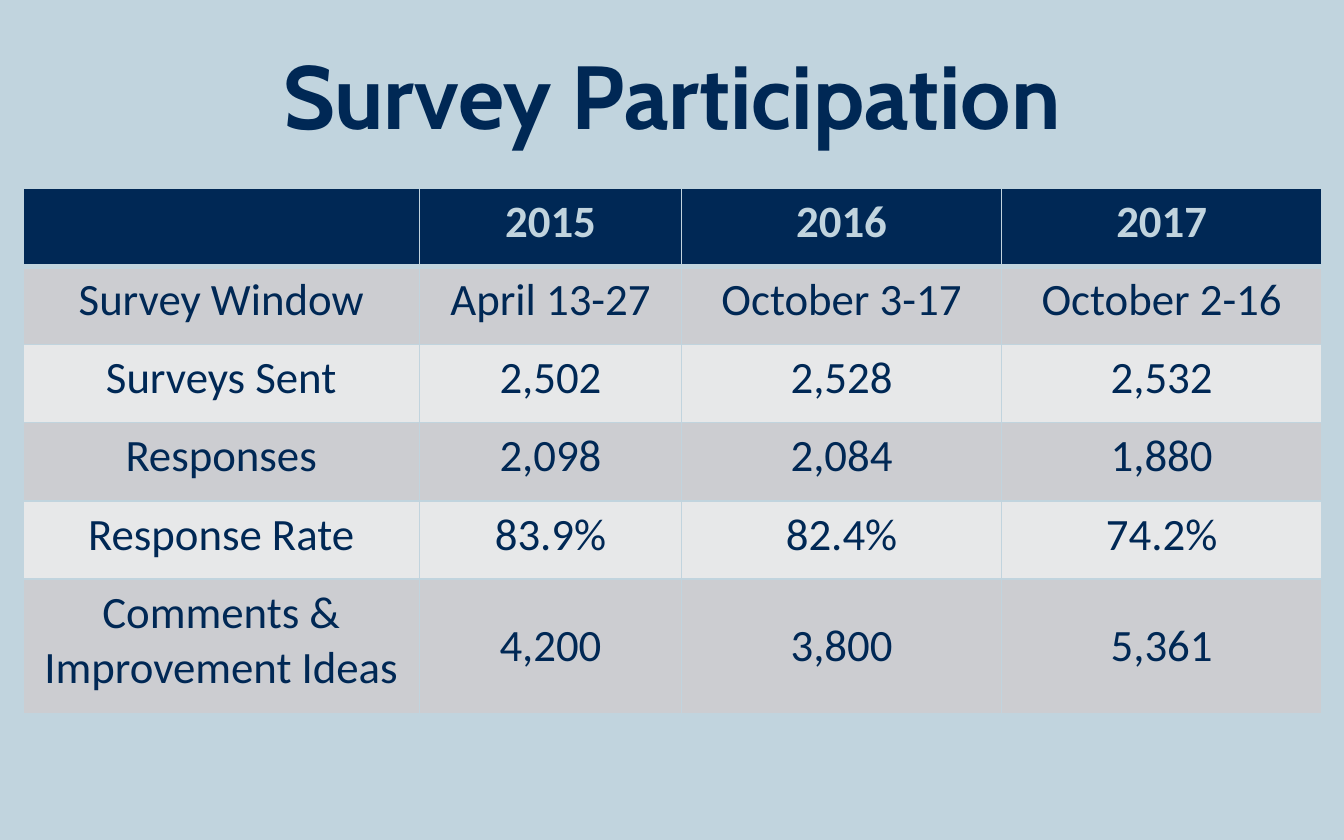
from dataclasses import dataclass

from lxml import etree
from pptx import Presentation
from pptx.dml.color import RGBColor
from pptx.enum.text import MSO_ANCHOR, PP_ALIGN
from pptx.oxml.ns import qn
from pptx.util import Cm, Pt

CENTER = PP_ALIGN.CENTER
TOP, MIDDLE = MSO_ANCHOR.TOP, MSO_ANCHOR.MIDDLE


@dataclass(frozen=True)
class Theme:
    pale: str = "C1D4DE"
    navy: str = "002855"
    band_dark: str = "CCCDD1"
    band_light: str = "E7E8E9"
    title_font: str = "Cabin"
    body_font: str = "Calibri"
    title_size: int = 48
    body_size: int = 24
    rule: int = 1
    header_rule: int = 3


@dataclass(frozen=True)
class SurveyRow:
    label: str
    values: tuple[str, str, str]
    height: float = 1.48
    value_anchor: MSO_ANCHOR = TOP


THEME = Theme()
COLUMN_WIDTHS = (7.5, 4.95, 6.05, 6.05)
ROWS = (
    SurveyRow("", ("2015", "2016", "2017")),
    SurveyRow("Survey Window", ("April 13-27", "October 3-17", "October 2-16")),
    SurveyRow("Surveys Sent", ("2,502", "2,528", "2,532")),
    SurveyRow("Responses", ("2,098", "2,084", "1,880")),
    SurveyRow("Response Rate", ("83.9%", "82.4%", "74.2%")),
    SurveyRow("Comments & Improvement Ideas", ("4,200", "3,800", "5,361"), 2.54, MIDDLE),
)


def write(tf, text: str, font: str, size: int, color: str, bold: bool) -> None:
    p = tf.paragraphs[0]
    p.alignment = CENTER
    if not text:
        return
    r = p.add_run()
    r.text = text
    for name, value in {"name": font, "size": Pt(size), "bold": bold}.items():
        setattr(r.font, name, value)
    r.font.color.rgb = RGBColor.from_string(color)


def add_borders(cell, widths: dict[str, int]) -> None:
    tc_pr = cell._tc.get_or_add_tcPr()
    for side, width in widths.items():
        ln = etree.SubElement(tc_pr, qn(f"a:ln{side}"), w=str(Pt(width)))
        fill = etree.SubElement(ln, qn("a:solidFill"))
        etree.SubElement(fill, qn("a:srgbClr"), val=THEME.pale)


def add_title(s, text: str) -> None:
    tf = s.shapes.add_textbox(0, Cm(0.64), Cm(25.4), Cm(2)).text_frame
    for name, value in {"word_wrap": True, "vertical_anchor": TOP}.items():
        setattr(tf, name, value)
    write(tf, text, THEME.title_font, THEME.title_size, THEME.navy, True)


def add_survey_table(s, rows: tuple[SurveyRow, ...]) -> None:
    table = s.shapes.add_table(
        len(rows), len(COLUMN_WIDTHS), Cm(0.43), Cm(3.55),
        Cm(sum(COLUMN_WIDTHS)), Cm(sum(row.height for row in rows)),
    ).table
    table.first_row = table.horz_banding = False
    for column, width in zip(table.columns, COLUMN_WIDTHS):
        column.width = Cm(width)
    for i, row in enumerate(rows):
        table.rows[i].height = Cm(row.height)
        header = i == 0
        band = THEME.band_dark if i % 2 else THEME.band_light
        fill, color = (THEME.navy, THEME.pale) if header else (band, THEME.navy)
        borders = dict.fromkeys("LRTB", THEME.rule)
        if header:
            borders["B"] = THEME.header_rule
        elif i == 1:
            borders["T"] = THEME.header_rule
        for j, text in enumerate((row.label, *row.values)):
            cell = table.cell(i, j)
            add_borders(cell, borders)
            cell.fill.solid()
            cell.fill.fore_color.rgb = RGBColor.from_string(fill)
            cell.vertical_anchor = row.value_anchor if j else TOP
            write(cell.text_frame, text, THEME.body_font, THEME.body_size, color, header)


def main() -> None:
    prs = Presentation()
    prs.slide_width, prs.slide_height = Cm(25.4), Cm(15.88)
    s = prs.slides.add_slide(prs.slide_layouts[6])
    s.background.fill.solid()
    s.background.fill.fore_color.rgb = RGBColor.from_string(THEME.pale)
    add_title(s, "Survey Participation")
    add_survey_table(s, ROWS)
    prs.save("out.pptx")


if __name__ == "__main__":
    main()
